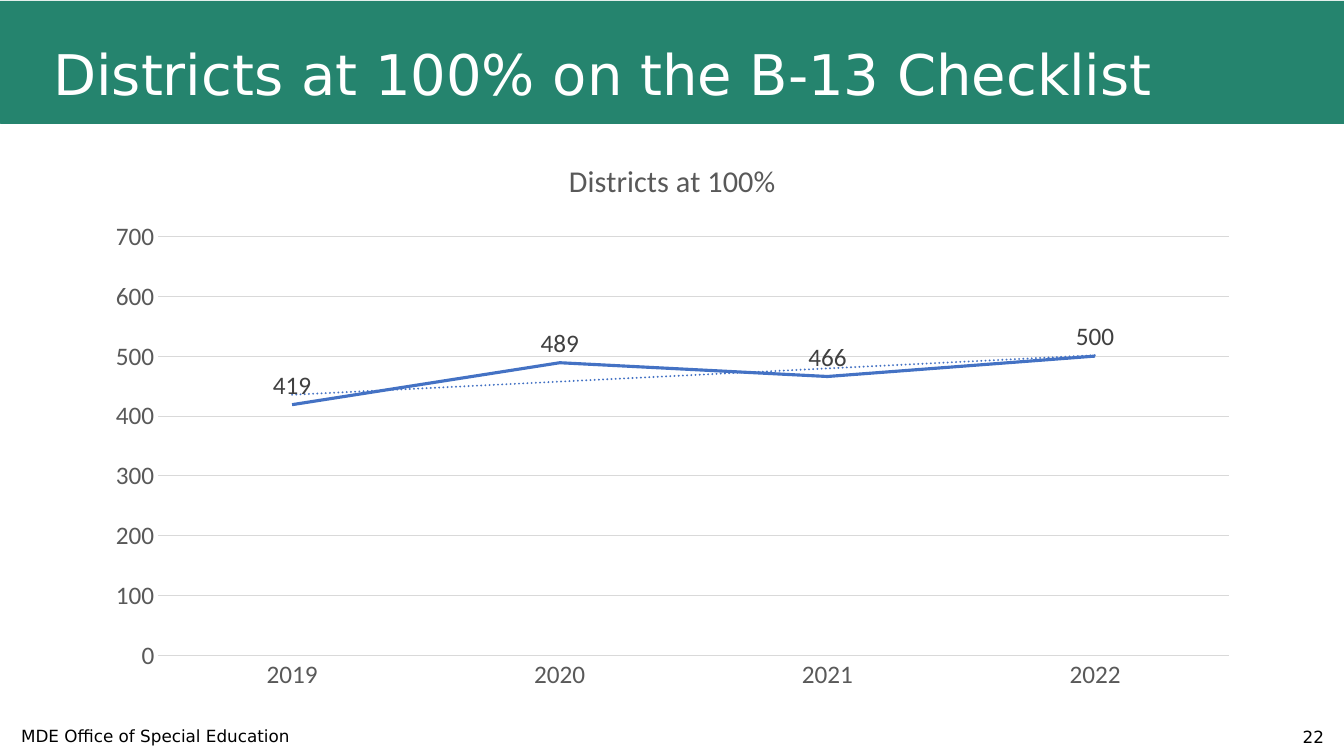
from lxml.etree import fromstring
from pptx import Presentation
from pptx.chart.data import CategoryChartData
from pptx.dml.color import RGBColor
from pptx.enum.chart import XL_CHART_TYPE, XL_LABEL_POSITION, XL_TICK_MARK
from pptx.enum.shapes import MSO_SHAPE
from pptx.enum.text import MSO_ANCHOR, PP_ALIGN
from pptx.util import Inches, Pt

GREEN = RGBColor(0x25, 0x84, 0x6E)
BLUE = RGBColor(0x44, 0x72, 0xC4)
WHITE = RGBColor(0xFF, 0xFF, 0xFF)
BLACK = RGBColor(0, 0, 0)
DARK = RGBColor(0x40, 0x40, 0x40)
GRAY = RGBColor(0x59, 0x59, 0x59)
PALE = RGBColor(0xD9, 0xD9, 0xD9)
WIDE, HIGH = Inches(13.33), Inches(7.5)
YEARS = ("2019", "2020", "2021", "2022")
COUNTS = (419, 489, 466, 500)
TREND = f"""<c:trendline
 xmlns:c="http://schemas.openxmlformats.org/drawingml/2006/chart"
 xmlns:a="http://schemas.openxmlformats.org/drawingml/2006/main">
<c:spPr><a:ln w="{Pt(1.5)}" cap="rnd"><a:solidFill><a:srgbClr val="{BLUE}"/></a:solidFill>
<a:prstDash val="sysDot"/></a:ln></c:spPr>
<c:trendlineType val="linear"/><c:dispRSqr val="0"/><c:dispEq val="0"/>
</c:trendline>"""


def share(left, top, width, height):
    """Turn percentages of the slide into a box of lengths."""
    pairs = ((left, WIDE), (top, HIGH), (width, WIDE), (height, HIGH))
    return [int(part * whole / 100) for part, whole in pairs]


def style(font, size, color, name="Calibri"):
    """Set the size, colour and face of a font."""
    font.size, font.name = Pt(size), name
    font.color.rgb = color


def stroke(line, color, width):
    """Set the colour and width of a line."""
    line.color.rgb = color
    line.width = Pt(width)


def add_band(slide):
    """Draw the green band behind the title."""
    band = slide.shapes.add_shape(MSO_SHAPE.RECTANGLE, *share(0, 0.13, 100, 16.13))
    band.shadow.inherit = False
    band.fill.solid()
    band.fill.fore_color.rgb = GREEN
    stroke(band.line, GREEN, 0.5)


def add_text(slide, text, box, size, color, align=PP_ALIGN.LEFT, space=1.0):
    """Place one line of text, centred in the height of its box."""
    frame = slide.shapes.add_textbox(*share(*box)).text_frame
    frame.word_wrap = True
    frame.vertical_anchor = MSO_ANCHOR.MIDDLE
    frame.text = text
    line = frame.paragraphs[0]
    line.alignment, line.line_spacing = align, space
    style(line.runs[0].font, size, color, "DejaVu Sans")


def set_axes(chart):
    """Format both axes and the grid."""
    years, counts = chart.category_axis, chart.value_axis
    for axis in (years, counts):
        axis.major_tick_mark = axis.minor_tick_mark = XL_TICK_MARK.NONE
        style(axis.tick_labels.font, 18, GRAY)
    stroke(years.format.line, PALE, 0.75)
    counts.format.line.fill.background()
    counts.minimum_scale, counts.maximum_scale, counts.major_unit = 0, 700, 100
    stroke(counts.major_gridlines.format.line, PALE, 0.75)


def set_series(series):
    """Format the line, its labels and its trend."""
    series.smooth = False
    stroke(series.format.line, BLUE, 2.25)
    labels = series.data_labels
    labels.show_value = True
    labels.position = XL_LABEL_POSITION.ABOVE
    style(labels.font, 18, DARK)
    node = series._element
    node.find("{*}cat").addprevious(fromstring(TREND))


def add_graph(slide):
    """Add the line chart of districts by year."""
    data = CategoryChartData()
    data.categories = YEARS
    data.add_series("Series 1", COUNTS)
    box = share(6.9, 18.13, 86.27, 74.67)
    chart = slide.shapes.add_chart(XL_CHART_TYPE.LINE, *box, data).chart
    style(chart.font, 18, BLACK)
    chart.has_legend = False
    chart.has_title = True
    frame = chart.chart_title.text_frame
    frame.text = "Districts at 100%"
    font = frame.paragraphs[0].runs[0].font
    style(font, 21.6, GRAY)
    font.bold = False
    chart.chart_title.include_in_layout = False
    chart.plots[0].vary_by_categories = False
    set_axes(chart)
    set_series(chart.plots[0].series[0])


def main():
    """Build and save the slide."""
    deck = Presentation()
    deck.slide_width, deck.slide_height = WIDE, HIGH
    slide = deck.slides.add_slide(deck.slide_layouts[6])
    add_band(slide)
    add_text(slide, "Districts at 100% on the B-13 Checklist",
             (3.23, 4.13, 93.17, 12.13), 40, WHITE, space=0.9)
    add_graph(slide)
    add_text(slide, "22", (76.74, 94.8, 22.51, 5.33), 12, BLACK, PP_ALIGN.RIGHT)
    add_text(slide, "MDE Office of Special Education",
             (0.83, 94.67, 33.76, 5.33), 12, BLACK)
    deck.save("out.pptx")


if __name__ == "__main__":
    main()
